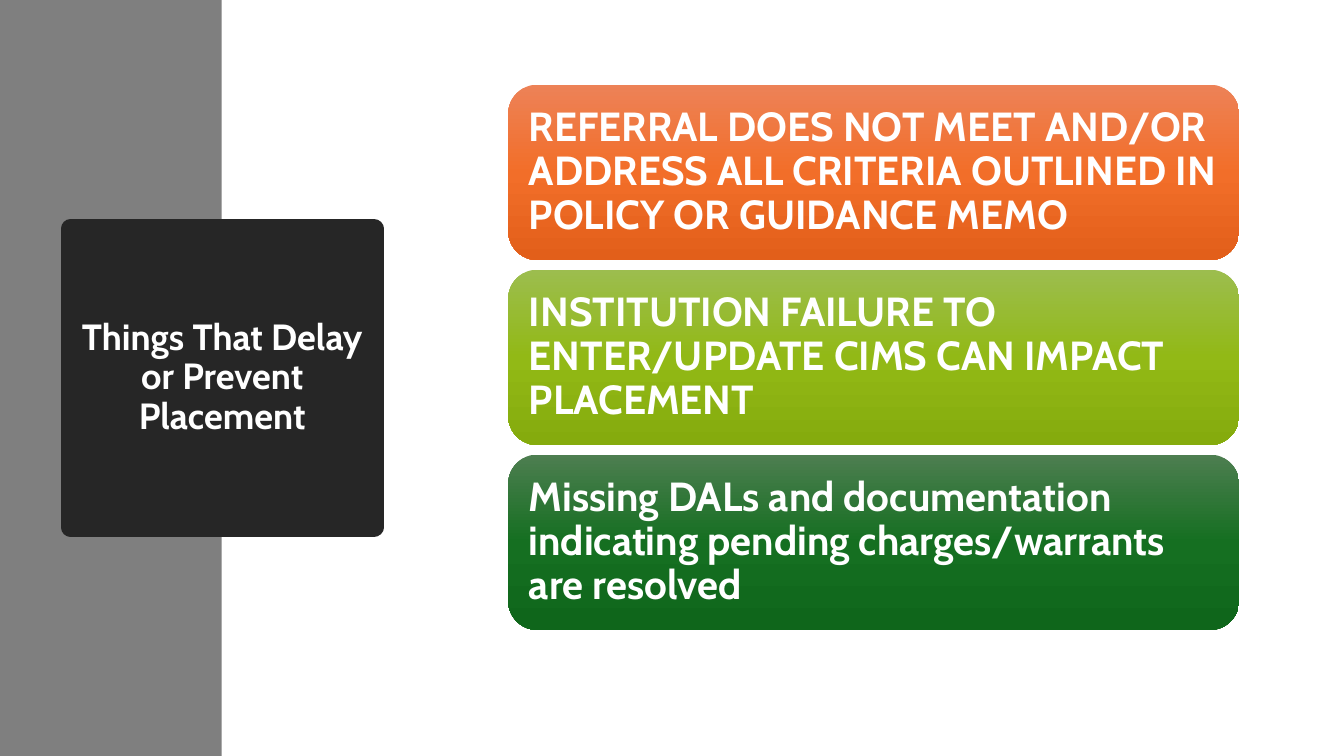
import copy
from dataclasses import dataclass

import pptx
import pptx.dml.color
import pptx.enum.shapes
import pptx.enum.text
import pptx.oxml.ns
import pptx.util

Inches = pptx.util.Inches
Align = pptx.enum.text.PP_ALIGN
Shape = pptx.enum.shapes.MSO_SHAPE


def rgb(value):
    return pptx.dml.color.RGBColor.from_string(value)


@dataclass(frozen=True)
class Theme:
    font: str = "Cabin"
    text: str = "FFFFFF"
    side_band: str = "7F7F7F"
    title_box: str = "262626"
    orange: tuple = ("ED8257", "F26E29", "E25F1A")
    lime: tuple = ("9CBD4E", "92B916", "85AB0D")
    green: tuple = ("4D7E50", "156F21", "0F661B")
    title_size: int = 26
    reason_size: int = 29
    title_border: float = 13.75
    line_spacing: float = 0.9


class SlideBuilder:
    def __init__(self, slide, theme):
        self.slide = slide
        self.theme = theme

    def set_wording(self, shape, wording, size, alignment, **frame_format):
        frame = shape.text_frame
        frame_format = {
            "word_wrap": True,
            "auto_size": pptx.enum.text.MSO_AUTO_SIZE.NONE,
            "vertical_anchor": pptx.enum.text.MSO_ANCHOR.MIDDLE,
            **frame_format,
        }
        for attribute, value in frame_format.items():
            setattr(frame, attribute, value)
        paragraph = frame.paragraphs[0]
        paragraph.alignment = alignment
        paragraph.line_spacing = self.theme.line_spacing
        run = paragraph.add_run()
        run.text = wording
        font_format = {"name": self.theme.font, "size": pptx.util.Pt(size), "bold": True}
        for attribute, value in font_format.items():
            setattr(run.font, attribute, value)
        run.font.color.rgb = rgb(self.theme.text)

    def block(self, kind, left, top, width, height):
        """Add a preset shape without outline or shadow."""
        shape = self.slide.shapes.add_shape(
            kind, Inches(left), Inches(top), Inches(width), Inches(height))
        shape.shadow.inherit = False
        shape.line.fill.background()
        return shape

    def side_band(self, width, height):
        band = self.block(Shape.RECTANGLE, 0, 0, width, height)
        band.fill.solid()
        band.fill.fore_color.rgb = rgb(self.theme.side_band)

    def title(self, wording, left, top, width, height):
        """Format the title placeholder and bring it to the front."""
        title = self.slide.shapes.title
        place = {"left": left, "top": top, "width": width, "height": height}
        for attribute, value in place.items():
            setattr(title, attribute, Inches(value))
        title.fill.solid()
        title.fill.fore_color.rgb = rgb(self.theme.title_box)
        title.line.color.rgb = rgb(self.theme.title_box)
        title.line.width = pptx.util.Pt(self.theme.title_border)
        self.set_wording(title, wording, self.theme.title_size, Align.CENTER)
        title.element.getparent().append(title.element)

    def reason(self, wording, colours, left, top, width, height):
        """Add a rounded card with a three-stop gradient, top to bottom."""
        card = self.block(Shape.ROUNDED_RECTANGLE, left, top, width, height)
        card.fill.gradient()
        card.fill.gradient_angle = 270
        stops = card.element.find(".//" + pptx.oxml.ns.qn("a:gsLst"))
        stops.insert(1, copy.deepcopy(stops[0]))
        for index, (stop, colour) in enumerate(zip(card.fill.gradient_stops, colours)):
            stop.position = index / 2
            stop.color.rgb = rgb(colour)
        self.set_wording(card, wording, self.theme.reason_size, Align.LEFT,
                         margin_left=Inches(0.12), margin_right=Inches(0.1))


def main():
    presentation = pptx.Presentation()
    presentation.slide_width = Inches(13.33)
    presentation.slide_height = Inches(7.5)
    theme = Theme()
    builder = SlideBuilder(
        presentation.slides.add_slide(presentation.slide_layouts[5]), theme)

    builder.side_band(2.2, 7.5)
    builder.title("Things That Delay or Prevent Placement", 0.7, 2.27, 3.01, 2.96)

    reasons = [
        ("REFERRAL DOES NOT MEET AND/OR ADDRESS ALL CRITERIA OUTLINED IN "
         "POLICY OR GUIDANCE MEMO", theme.orange),
        ("INSTITUTION FAILURE TO ENTER/UPDATE CIMS CAN IMPACT PLACEMENT", theme.lime),
        ("Missing DALs and documentation indicating pending charges/warrants "
         "are resolved", theme.green),
    ]
    first_top, last_top = 0.84, 4.51
    step = (last_top - first_top) / (len(reasons) - 1)
    for index, (wording, colours) in enumerate(reasons):
        builder.reason(wording, colours, 5.04, first_top + index * step, 7.25, 1.74)

    presentation.save("out.pptx")


if __name__ == "__main__":
    main()
